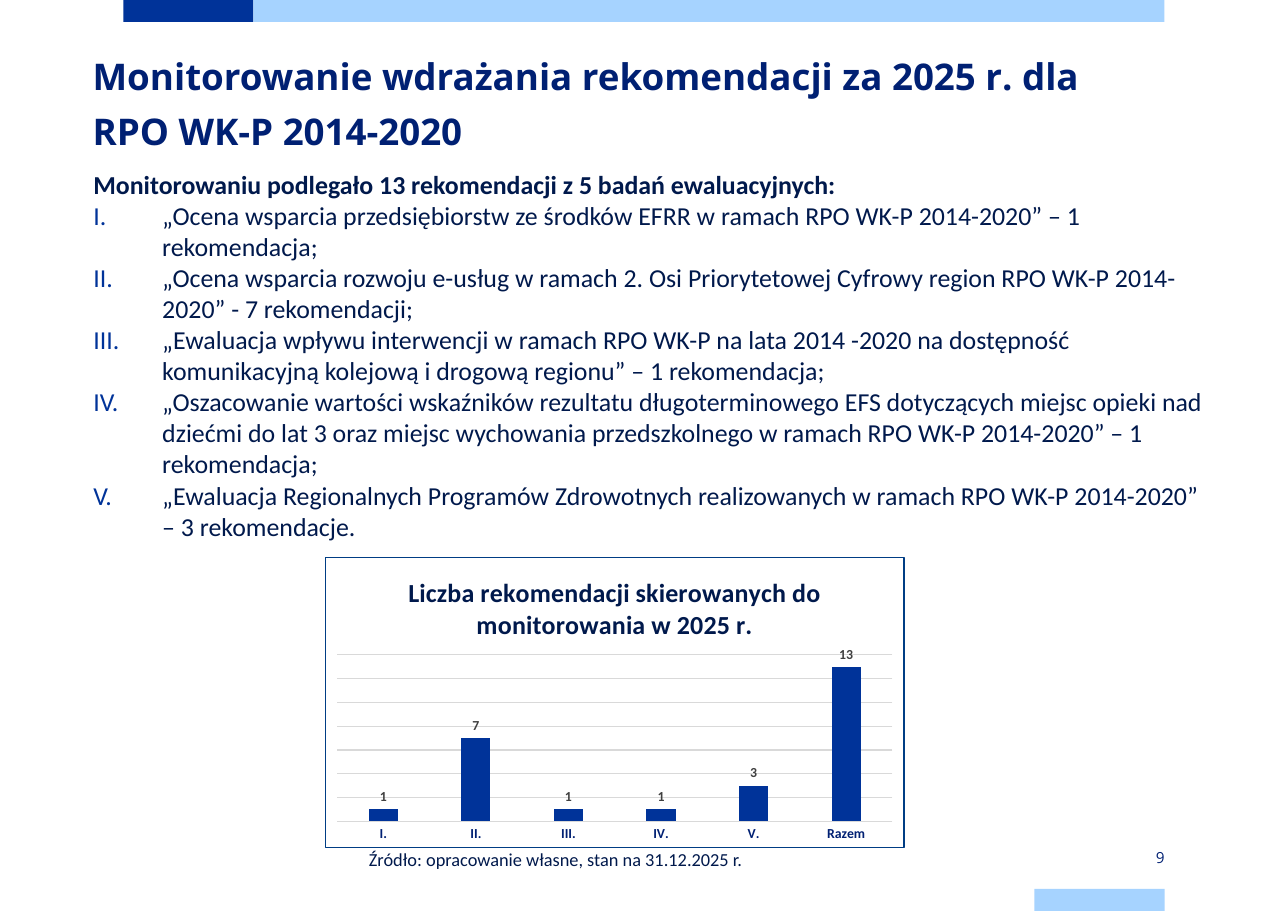
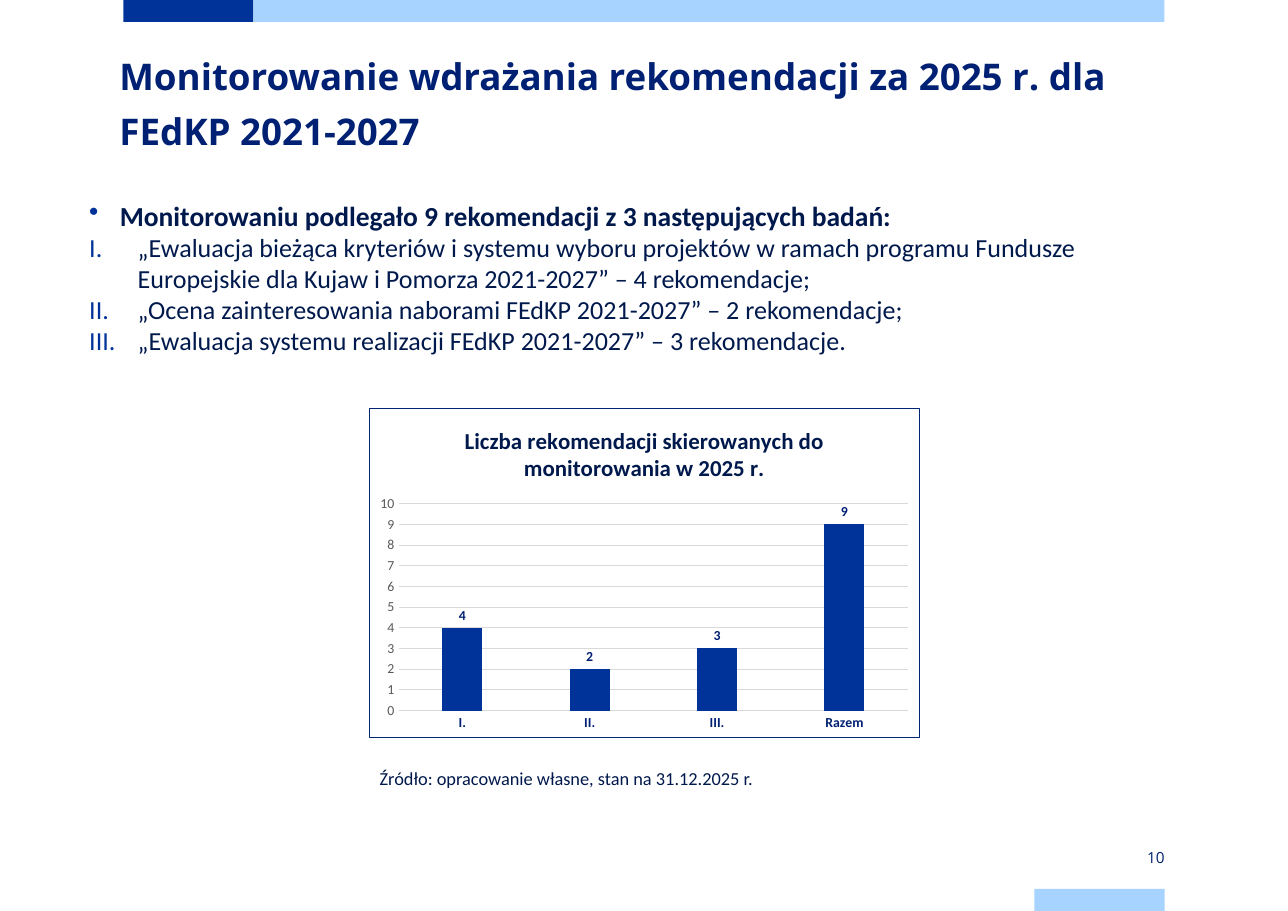
from dataclasses import dataclass

from lxml import etree
from pptx import Presentation
from pptx.chart.data import CategoryChartData
from pptx.dml.color import RGBColor
from pptx.enum.chart import XL_CHART_TYPE as ChartType, XL_LABEL_POSITION as LabelPosition
from pptx.enum.chart import XL_TICK_MARK as TickMark
from pptx.enum.shapes import MSO_SHAPE as Preset
from pptx.enum.text import MSO_ANCHOR as Anchor, MSO_AUTO_SIZE as AutoSize, PP_ALIGN as Align
from pptx.oxml import parse_xml
from pptx.oxml.ns import nsdecls, qn
from pptx.util import Pt


@dataclass(frozen=True)
class Theme:
    blue: str = "003399"
    sky: str = "A6D3FF"
    navy: str = "002073"
    ink: str = "00194C"
    grid: str = "D9D9D9"
    dark_grey: str = "404040"
    grey: str = "595959"
    white: str = "FFFFFF"
    heading_font: str = "Open Sans"
    text_font: str = "Calibri"
    title_size: float = 24
    title_pitch: float = 36
    lead_size: float = 18
    lead_pitch: float = 24
    list_size: float = 17
    dense_size: float = 16.9
    list_pitch: float = 20.3
    source_size: float = 12
    number_size: float = 10
    chart_size: float = 10
    small_size: float = 9
    hairline: float = 0.75


@dataclass(frozen=True)
class Box:
    left: float
    top: float
    width: float
    height: float

    def lengths(self):
        return [Pt(side) for side in (self.left, self.top, self.width, self.height)]


@dataclass(frozen=True)
class Item:
    text: str
    size: float
    pitch: float
    bullet: str = ""
    indent: float = 0
    bold: bool = False


@dataclass(frozen=True)
class ChartSpec:
    title: str
    title_size: float
    categories: tuple
    values: tuple
    maximum: float
    step: float
    border: str
    label_color: str
    show_scale: bool


THEME = Theme()
SLIDE_WIDTH, SLIDE_HEIGHT = 841.68, 595.44
BAND_LEFT, BAND_RIGHT, BAND_HEIGHT, BAND_SHORT = 80.6, 761, 14.4, 85
NUMBER_BOX = Box(BAND_RIGHT - BAND_SHORT, 553, BAND_SHORT, 14.4)
ROMAN = '<a:buAutoNum {} type="romanUcPeriod"/>'
DOT = '<a:buChar {} char="•"/>'
SOURCE = "Źródło: opracowanie własne, stan na 31.12.2025 r."
CHART_TITLE = "Liczba rekomendacji skierowanych do monitorowania w 2025 r."


def rgb(color):
    return RGBColor.from_string(color)


def style_font(font, size, color, bold=False, face=THEME.text_font):
    font.size = Pt(size)
    font.name = face
    font.bold = bold
    font.color.rgb = rgb(color)


def add_text(paragraph, text, *style):
    run = paragraph.add_run()
    run.text = text
    style_font(run.font, *style)


def place(shape, box):
    shape.left, shape.top, shape.width, shape.height = box.lengths()


def clear_margins(frame):
    frame.margin_left = frame.margin_right = frame.margin_top = frame.margin_bottom = 0


def prepare_frame(placeholder, box):
    place(placeholder, box)
    frame = placeholder.text_frame
    clear_margins(frame)
    frame.word_wrap = True
    frame.auto_size = AutoSize.NONE
    frame.vertical_anchor = Anchor.TOP
    return frame


def add_master_bands(slide):
    master = slide.slide_layout.slide_master
    tree = master.shapes[0].element.getparent()
    bands = (
        (Box(BAND_LEFT, 0, BAND_SHORT, BAND_HEIGHT), THEME.blue),
        (Box(BAND_LEFT + BAND_SHORT, 0, BAND_RIGHT - BAND_LEFT - BAND_SHORT, BAND_HEIGHT), THEME.sky),
        (Box(BAND_RIGHT - BAND_SHORT, SLIDE_HEIGHT - BAND_HEIGHT, BAND_SHORT, BAND_HEIGHT), THEME.sky),
    )
    for order, (box, color) in enumerate(bands):
        band = slide.shapes.add_shape(Preset.RECTANGLE, *box.lengths())
        band.shadow.inherit = False
        band.fill.solid()
        band.fill.fore_color.rgb = rgb(color)
        band.line.fill.background()
        band.element.nvSpPr.cNvPr.set("id", str(20 + order))
        tree.insert(2 + order, band.element)


def fill_title(slide, box, lines):
    paragraph = prepare_frame(slide.shapes.title, box).paragraphs[0]
    paragraph.alignment = Align.LEFT
    paragraph.line_spacing = Pt(THEME.title_pitch)
    for position, line in enumerate(lines):
        if position:
            paragraph.add_line_break()
        add_text(paragraph, line, THEME.title_size, THEME.navy, True, THEME.heading_font)


def set_bullet(paragraph, item):
    properties = paragraph._p.get_or_add_pPr()
    properties.set("marL", str(Pt(item.indent)))
    properties.set("indent", str(-Pt(item.indent)))
    if not item.bullet:
        etree.SubElement(properties, qn("a:buNone"))
        return
    color = etree.SubElement(properties, qn("a:buClr"))
    etree.SubElement(color, qn("a:srgbClr"), val=THEME.blue)
    etree.SubElement(properties, qn("a:buFontTx"))
    properties.append(parse_xml(item.bullet.format(nsdecls("a"))))


def fill_list(slide, box, items):
    frame = prepare_frame(slide.placeholders[1], box)
    for position, item in enumerate(items):
        paragraph = frame.add_paragraph() if position else frame.paragraphs[0]
        set_bullet(paragraph, item)
        paragraph.alignment = Align.LEFT
        paragraph.line_spacing = Pt(item.pitch)
        paragraph.space_before = Pt(0)
        add_text(paragraph, item.text, item.size, THEME.ink, item.bold)


def add_source(slide, box):
    frame = slide.shapes.add_textbox(*box.lengths()).text_frame
    frame.word_wrap = True
    paragraph = frame.paragraphs[0]
    paragraph.line_spacing = 1.15
    add_text(paragraph, SOURCE, THEME.source_size, THEME.ink)


def add_number(slide, box, number):
    frame = slide.shapes.add_textbox(*box.lengths()).text_frame
    clear_margins(frame)
    frame.word_wrap = True
    frame.vertical_anchor = Anchor.MIDDLE
    paragraph = frame.paragraphs[0]
    paragraph.alignment = Align.RIGHT
    add_text(paragraph, str(number), THEME.number_size, THEME.navy, False, THEME.heading_font)


def frame_chart(chart, color):
    chart.element.find(qn("c:chart")).addnext(parse_xml(
        f'<c:spPr {nsdecls("c", "a")}>'
        f'<a:solidFill><a:srgbClr val="{THEME.white}"/></a:solidFill>'
        f'<a:ln w="{Pt(THEME.hairline)}"><a:solidFill><a:srgbClr val="{color}"/></a:solidFill></a:ln>'
        '</c:spPr>'))


def style_line(line):
    line.color.rgb = rgb(THEME.grid)
    line.width = Pt(THEME.hairline)


def style_axes(chart, spec):
    categories, scale = chart.category_axis, chart.value_axis
    categories.major_tick_mark = scale.major_tick_mark = TickMark.NONE
    style_font(categories.tick_labels.font, THEME.small_size, THEME.navy, True)
    style_line(categories.format.line)
    scale.minimum_scale, scale.maximum_scale = 0, spec.maximum
    scale.major_unit = spec.step
    scale.has_major_gridlines = True
    style_line(scale.major_gridlines.format.line)
    scale.format.line.fill.background()
    style_font(scale.tick_labels.font, THEME.small_size, THEME.grey)
    scale.visible = spec.show_scale


def add_recommendation_chart(slide, box, spec):
    figures = CategoryChartData(number_format="0")
    figures.categories = spec.categories
    figures.add_series(spec.title, spec.values)
    chart = slide.shapes.add_chart(ChartType.COLUMN_CLUSTERED, *box.lengths(), figures).chart
    style_font(chart.font, THEME.chart_size, "000000")
    frame_chart(chart, spec.border)
    chart.has_legend = False
    chart.has_title = True
    chart.chart_title.include_in_layout = False
    heading = chart.chart_title.text_frame.paragraphs[0]
    add_text(heading, spec.title, spec.title_size, THEME.ink, True)
    style_axes(chart, spec)
    plot = chart.plots[0]
    plot.vary_by_categories = False
    plot.gap_width, plot.overlap = 219, -27
    columns = plot.series[0]
    columns.invert_if_negative = False
    columns.format.fill.solid()
    columns.format.fill.fore_color.rgb = rgb(THEME.blue)
    plot.has_data_labels = True
    labels = plot.data_labels
    labels.show_value = True
    labels.position = LabelPosition.OUTSIDE_END
    style_font(labels.font, THEME.small_size, spec.label_color, True)


def build_regional_programme(slide):
    fill_title(slide, Box(60.5, 28, 720.5, 85),
               ("Monitorowanie wdrażania rekomendacji za 2025 r. dla", "RPO WK-P 2014-2020"))
    studies = (
        "„Ocena wsparcia przedsiębiorstw ze środków EFRR w ramach RPO WK-P 2014-2020” – 1 rekomendacja;",
        "„Ocena wsparcia rozwoju e-usług w ramach 2. Osi Priorytetowej Cyfrowy region RPO WK-P 2014-2020” - 7 rekomendacji;",
        "„Ewaluacja wpływu interwencji w ramach RPO WK-P na lata 2014 -2020 na dostępność komunikacyjną kolejową i drogową regionu” – 1 rekomendacja;",
        "„Oszacowanie wartości wskaźników rezultatu długoterminowego EFS dotyczących miejsc opieki nad dziećmi do lat 3 oraz miejsc wychowania przedszkolnego w ramach RPO WK-P 2014-2020” – 1 rekomendacja;",
        "„Ewaluacja Regionalnych Programów Zdrowotnych realizowanych w ramach RPO WK-P 2014-2020” – 3 rekomendacje.",
    )
    lead = Item("Monitorowaniu podlegało 13 rekomendacji z 5 badań ewaluacyjnych:",
                THEME.dense_size, THEME.list_pitch, bold=True)
    fill_list(slide, Box(61, 110.2, 734.4, 255.6),
              [lead] + [Item(study, THEME.dense_size, THEME.list_pitch, ROMAN, 45) for study in studies])
    add_source(slide, Box(234, 548.6, 420.5, 23))
    add_recommendation_chart(slide, Box(212.4, 364.3, 378.7, 190), ChartSpec(
        CHART_TITLE, 17, ("I.", "II.", "III.", "IV.", "V.", "Razem"), (1, 7, 1, 1, 3, 13),
        14, 2, "003D84", THEME.dark_grey, False))


def build_european_funds(slide):
    fill_title(slide, Box(78, 28, 702.7, 85),
               ("Monitorowanie wdrażania rekomendacji za 2025 r. dla", "FEdKP 2021-2027"))
    studies = (
        "„Ewaluacja bieżąca kryteriów i systemu wyboru projektów w ramach programu Fundusze Europejskie dla Kujaw i Pomorza 2021-2027” – 4 rekomendacje;",
        "„Ocena zainteresowania naborami FEdKP 2021-2027” – 2 rekomendacje;",
        "„Ewaluacja systemu realizacji FEdKP 2021-2027” – 3 rekomendacje.",
    )
    lead = Item("Monitorowaniu podlegało 9 rekomendacji z 3 następujących badań:",
                THEME.lead_size, THEME.lead_pitch, DOT, 20, True)
    fill_list(slide, Box(58.3, 127.4, 724.3, 136),
              [lead] + [Item(study, THEME.list_size, THEME.list_pitch, ROMAN, 31.7) for study in studies])
    add_source(slide, Box(241, 496, 420.5, 23))
    add_recommendation_chart(slide, Box(241, 266.4, 360, 216), ChartSpec(
        CHART_TITLE, 15, ("I.", "II.", "III.", "Razem"), (4, 2, 3, 9),
        10, 1, "002673", THEME.navy, True))


def main():
    prs = Presentation()
    prs.slide_width, prs.slide_height = Pt(SLIDE_WIDTH), Pt(SLIDE_HEIGHT)
    builders = (build_regional_programme, build_european_funds)
    for number, build in enumerate(builders, start=9):
        slide = prs.slides.add_slide(prs.slide_layouts[1])
        build(slide)
        add_number(slide, NUMBER_BOX, number)
    add_master_bands(prs.slides[0])
    prs.save("out.pptx")


if __name__ == "__main__":
    main()
